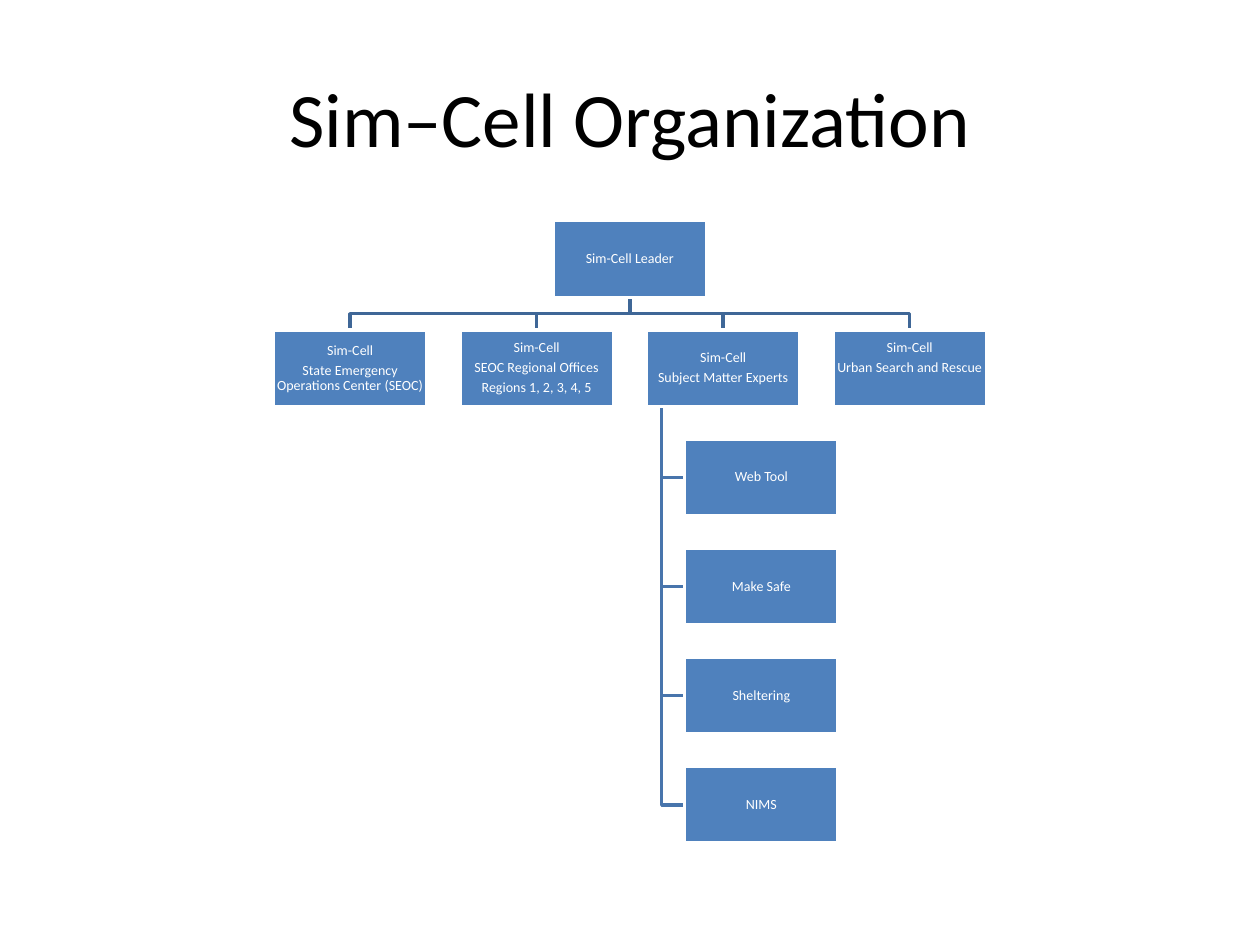
from pptx import Presentation
from pptx.dml.color import RGBColor
from pptx.enum.shapes import MSO_SHAPE
from pptx.enum.text import MSO_ANCHOR, PP_ALIGN
from pptx.util import Cm, Pt

RECT = MSO_SHAPE.RECTANGLE
MIDDLE = MSO_ANCHOR.MIDDLE
CENTER = PP_ALIGN.CENTER

FONT = "Calibri"
COLORS = {
    "title": "000000",
    "box": "4F81BD",
    "white": "FFFFFF",
    "branch": "3F6797",
    "twig": "4875AC",
}

BOX_W, BOX_H = 3.1, 1.55
COL_STEP, ROW_STEP = 3.76, 2.2
STEM_DX, CHILD_DX = 0.31, 0.77
INSET = 0.03

LEADER = "Sim-Cell Leader"
TEAMS = [
    ["Sim-Cell", "State Emergency Operations Center (SEOC)"],
    ["Sim-Cell", "SEOC Regional Offices", "Regions 1, 2, 3, 4, 5"],
    ["Sim-Cell", "Subject Matter Experts"],
    ["Sim-Cell", "Urban Search and Rescue"],
]
EXPERT_TEAM = 2
RAISED_TEAM = 3
EXPERTS = ["Web Tool", "Make Safe", "Sheltering", "NIMS"]


def rgb(name):
    return RGBColor.from_string(COLORS[name])


def add_run(p, text, size, color):
    p.alignment = CENTER
    r = p.add_run()
    r.text = text
    r.font.name = FONT
    r.font.size = Pt(size)
    r.font.color.rgb = rgb(color)


def add_title(slide, x, y, w, h):
    sp = slide.shapes.add_textbox(Cm(x), Cm(y), Cm(w), Cm(h))
    tf = sp.text_frame
    tf.word_wrap = True
    tf.vertical_anchor = MIDDLE
    add_run(tf.paragraphs[0], "Sim–Cell Organization", 44, "title")


def add_box(slide, x, y, lines, bottom=INSET):
    sp = slide.shapes.add_shape(RECT, Cm(x), Cm(y), Cm(BOX_W), Cm(BOX_H))
    sp.shadow.inherit = False
    sp.fill.solid()
    sp.fill.fore_color.rgb = rgb("box")
    sp.line.color.rgb = rgb("white")
    sp.line.width = Pt(2)
    tf = sp.text_frame
    tf.word_wrap = True
    tf.vertical_anchor = MIDDLE
    tf.margin_left = tf.margin_right = tf.margin_top = Cm(INSET)
    tf.margin_bottom = Cm(bottom)
    for i, line in enumerate(lines):
        p = tf.add_paragraph() if i else tf.paragraphs[0]
        p.line_spacing = 0.9
        p.space_after = Pt(2.8)
        add_run(p, line, 8, "white")


def add_elbow(slide, points, color):
    pts = [(Cm(x), Cm(y)) for x, y in points]
    fb = slide.shapes.build_freeform(*pts[0])
    fb.add_line_segments(pts[1:], close=False)
    sp = fb.convert_to_shape()
    sp.shadow.inherit = False
    sp.fill.background()
    sp.line.color.rgb = rgb(color)
    sp.line.width = Pt(2)


def add_experts(slide, x, y):
    stem_x, child_x = x + STEM_DX, x + CHILD_DX
    rows = [y + ROW_STEP * (i + 1) for i in range(len(EXPERTS))]
    for row in reversed(rows):
        mid = row + BOX_H / 2
        add_elbow(slide, [(stem_x, y + BOX_H), (stem_x, mid), (child_x, mid)], "twig")
    for row, name in zip(rows, EXPERTS):
        add_box(slide, child_x, row, [name])


def add_org_chart(slide, x, y, w):
    mid = x + w / 2
    team_y = y + ROW_STEP
    bus_y = (y + BOX_H + team_y) / 2
    cols = [x + COL_STEP * i for i in range(len(TEAMS))]
    for col in cols:
        cx = col + BOX_W / 2
        add_elbow(slide, [(mid, y + BOX_H), (mid, bus_y), (cx, bus_y), (cx, team_y)], "branch")
    add_experts(slide, cols[EXPERT_TEAM], team_y)
    add_box(slide, mid - BOX_W / 2, y, [LEADER])
    for i, (col, lines) in enumerate(zip(cols, TEAMS)):
        add_box(slide, col, team_y, lines, 0.43 if i == RAISED_TEAM else INSET)


def main():
    prs = Presentation()
    prs.slide_width, prs.slide_height = Cm(25.4), Cm(19.05)
    slide = prs.slides.add_slide(prs.slide_layouts[6])
    add_title(slide, 1.27, 0.76, 22.86, 3.18)
    add_org_chart(slide, 5.51, 4.45, 14.38)
    prs.save("out.pptx")


if __name__ == "__main__":
    main()
